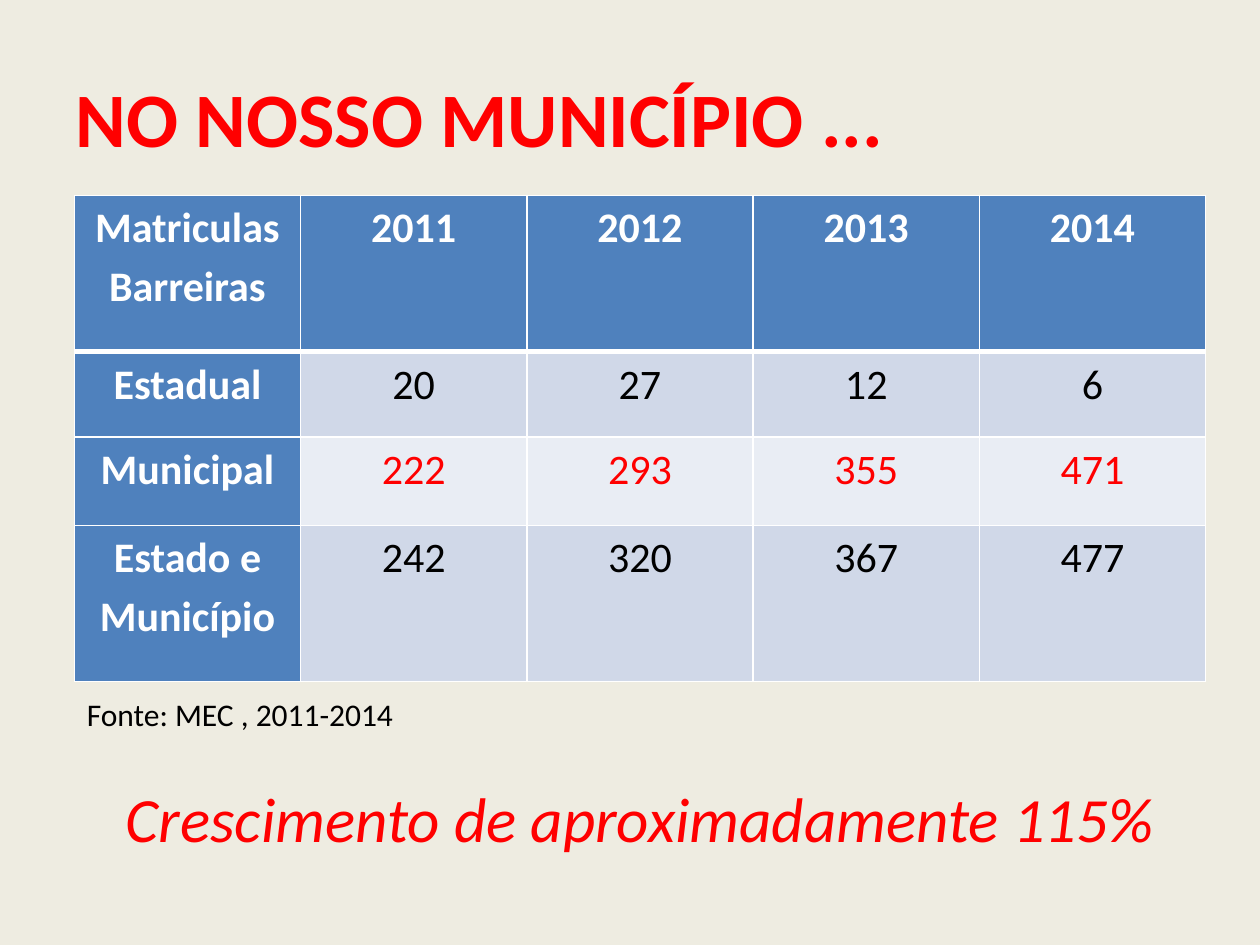
from dataclasses import dataclass

from lxml.etree import SubElement
from pptx import Presentation
from pptx.dml.color import RGBColor
from pptx.enum.text import MSO_ANCHOR, MSO_AUTO_SIZE, PP_ALIGN
from pptx.oxml.ns import qn
from pptx.util import Inches, Pt


@dataclass(frozen=True)
class Theme:
    font: str = "Calibri"
    back: str = "EEECE1"
    red: str = "FF0000"
    black: str = "000000"
    white: str = "FFFFFF"
    head: str = "4F81BD"
    bands: tuple = ("D0D8E8", "E9EDF4")
    title: int = 44
    claim: int = 36
    body: int = 24
    note: int = 18


THEME = Theme()
WIDE, HIGH = 10, 7.5
LEFT, SPAN = 0.59, 8.98  # column shared by table, source and claim

ROWS = [
    ["Matriculas\nBarreiras", "2011", "2012", "2013", "2014"],
    ["Estadual", "20", "27", "12", "6"],
    ["Municipal", "222", "293", "355", "471"],
    ["Estado e Município", "242", "320", "367", "477"],
]
SHARES = [1.24, 0.68, 0.7, 1.24]  # relative row heights
CITY = 2  # row shown in red


def style(frame, size, color, align, bold=False, italic=False, lead=None):
    for para in frame.paragraphs:
        para.alignment = align
        para.line_spacing = lead
        for run in para.runs:
            font = run.font
            font.name, font.size = THEME.font, Pt(size)
            font.bold, font.italic = bold, italic
            font.color.rgb = RGBColor.from_string(color)


def edge(cell, widths):
    """Draw white borders, given widths for left, right, top and bottom."""
    props = cell._tc.get_or_add_tcPr()
    for side, width in zip("LRTB", widths):
        line = SubElement(props, qn(f"a:ln{side}"), w=str(Pt(width)))
        fill = SubElement(line, qn("a:solidFill"))
        SubElement(fill, qn("a:srgbClr"), val=THEME.white)


def add_title(slide, box, text):
    title = slide.shapes.title
    title.left, title.top, title.width, title.height = map(Inches, box)
    frame = title.text_frame
    frame.text = text
    frame.vertical_anchor = MSO_ANCHOR.MIDDLE
    style(frame, THEME.title, THEME.red, PP_ALIGN.LEFT, bold=True)


def add_grid(slide, box, rows):
    shape = slide.shapes.add_table(len(rows), len(rows[0]), *map(Inches, box))
    table = shape.table
    for col in table.columns:
        col.width = Inches(box[2] / len(rows[0]))
    for row, share in zip(table.rows, SHARES):
        row.height = Inches(box[3] * share / sum(SHARES))

    for r, row in enumerate(rows):
        for c, text in enumerate(row):
            cell = table.cell(r, c)
            label = r == 0 or c == 0
            cell.text = text
            cell.margin_left = cell.margin_right = Inches(0.07)
            cell.margin_top = cell.margin_bottom = 0
            edge(cell, (1, 1, 3 if r == 1 else 1, 3 if r == 0 else 1))
            cell.fill.solid()
            shade = THEME.head if label else THEME.bands[(r - 1) % 2]
            cell.fill.fore_color.rgb = RGBColor.from_string(shade)
            plain = THEME.red if r == CITY else THEME.black
            style(cell.text_frame, THEME.body, THEME.white if label else plain,
                  PP_ALIGN.CENTER, bold=label, lead=1.15)


def add_text(slide, box, text, size, color, align, italic=False):
    frame = slide.shapes.add_textbox(*map(Inches, box)).text_frame
    frame.word_wrap = True
    frame.auto_size = MSO_AUTO_SIZE.SHAPE_TO_FIT_TEXT
    frame.text = text
    style(frame, size, color, align, italic=italic)


def main():
    deck = Presentation()
    deck.slide_width, deck.slide_height = Inches(WIDE), Inches(HIGH)
    slide = deck.slides.add_slide(deck.slide_layouts[5])
    fill = slide.background.fill
    fill.solid()
    fill.fore_color.rgb = RGBColor.from_string(THEME.back)

    # Heading
    add_title(slide, (WIDE * 0.05, HIGH * 0.04, WIDE * 0.9, HIGH / 6),
              "NO NOSSO MUNICÍPIO ...")
    # Enrolment table
    add_grid(slide, (LEFT, 1.55, SPAN, sum(SHARES)), ROWS)
    # Conclusion
    add_text(slide, (LEFT, 6.14, SPAN, 0.71),
             "Crescimento de aproximadamente 115%",
             THEME.claim, THEME.red, PP_ALIGN.CENTER, italic=True)
    # Source
    add_text(slide, (LEFT, 5.47, SPAN * 0.3, 0.4), "Fonte: MEC , 2011-2014",
             THEME.note, THEME.black, PP_ALIGN.LEFT)

    deck.save("out.pptx")


if __name__ == "__main__":
    main()
